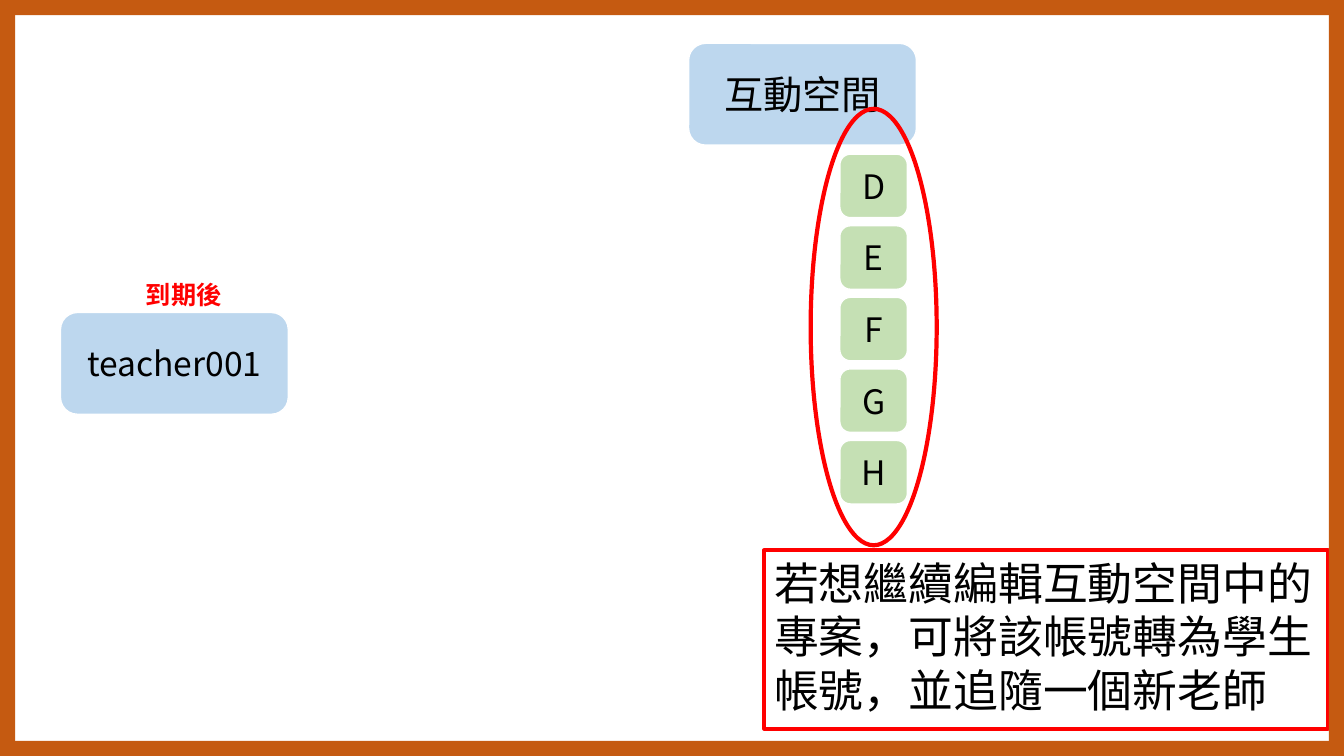
from lxml import etree
from pptx import Presentation
from pptx.dml.color import RGBColor
from pptx.enum.shapes import MSO_SHAPE
from pptx.enum.text import MSO_ANCHOR, PP_ALIGN
from pptx.oxml.ns import qn
from pptx.util import Pt

PX = 9144
WIDTH, HEIGHT, BORDER = 1333, 750, 15
FONT = "Noto Sans CJK SC"
RECT, ROUNDED, OVAL = MSO_SHAPE.RECTANGLE, MSO_SHAPE.ROUNDED_RECTANGLE, MSO_SHAPE.OVAL
CENTER, LEFT = PP_ALIGN.CENTER, PP_ALIGN.LEFT
MIDDLE = MSO_ANCHOR.MIDDLE
BLACK = RGBColor(0x00, 0x00, 0x00)
WHITE = RGBColor(0xFF, 0xFF, 0xFF)
RED = RGBColor(0xFF, 0x00, 0x00)
BLUE = RGBColor(0xBD, 0xD7, 0xEE)
GREEN = RGBColor(0xC5, 0xE0, 0xB4)
ORANGE = RGBColor(0xC5, 0x5A, 0x11)

deck = Presentation()
deck.slide_width = WIDTH * PX
deck.slide_height = HEIGHT * PX
slide = deck.slides.add_slide(deck.slide_layouts[6])


def draw(kind, box, fill=None, line=None, weight=1):
    shape = slide.shapes.add_shape(kind, *(n * PX for n in box))
    shape.shadow.inherit = False
    if fill is None:
        shape.fill.background()
    else:
        shape.fill.solid()
        shape.fill.fore_color.rgb = fill
    if line is None:
        shape.line.fill.background()
    else:
        shape.line.color.rgb = line
        shape.line.width = Pt(weight)
    return shape


def write(shape, text, size, color=BLACK, bold=False, align=CENTER):
    paragraph = shape.text_frame.paragraphs[0]
    paragraph.alignment = align
    run = paragraph.add_run()
    run.text = text
    for name, value in {"size": Pt(size), "bold": bold, "name": FONT}.items():
        setattr(run.font, name, value)
    run.font.color.rgb = color
    etree.SubElement(run.font._element, qn("a:ea")).set("typeface", FONT)


cards = [
    ("teacher001", 24, BLUE, (60, 310, 226, 101)),
    ("互動空間", 28, BLUE, (683, 43, 226, 101)),
]
cards += [(project, 24, GREEN, (833, 153 + 71 * i, 67, 63)) for i, project in enumerate("DEFGH")]
for label, size, fill, box in cards:
    card = draw(ROUNDED, box, fill, WHITE)
    card.text_frame.vertical_anchor = MIDDLE
    write(card, label, size)

expired = slide.shapes.add_textbox(135 * PX, 272 * PX, 96 * PX, 40 * PX)
expired.text_frame.word_wrap = False
write(expired, "到期後", 18, RED, True, LEFT)

draw(OVAL, (804, 108, 125, 433), line=RED, weight=3)
draw(RECT, (758, 546, 559, 177), line=RED, weight=3)

advice = slide.shapes.add_textbox(758 * PX, 546 * PX, 559 * PX, 172 * PX)
advice.text_frame.word_wrap = True
write(advice, "若想繼續編輯互動空間中的專案，可將該帳號轉為學生帳號，並追隨一個新老師", 32, align=LEFT)

for edge in [
    (0, 0, WIDTH, BORDER),
    (WIDTH - BORDER, 0, BORDER, HEIGHT),
    (0, HEIGHT - BORDER, WIDTH, BORDER),
    (0, 0, BORDER, HEIGHT),
]:
    draw(RECT, edge, ORANGE)

deck.save("out.pptx")
